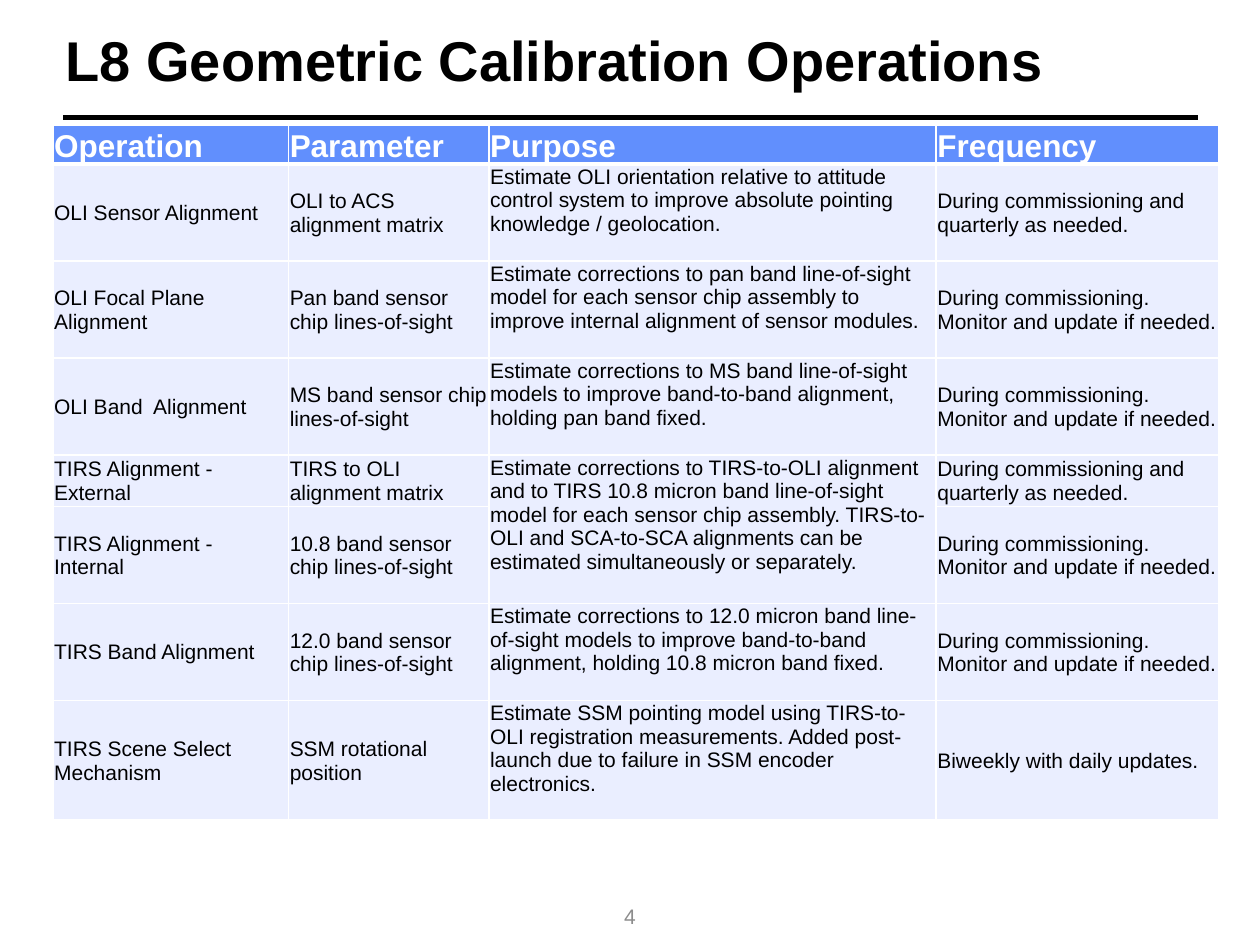
"""Build the L8 geometric calibration operations slide."""
from typing import NamedTuple

from lxml.etree import SubElement
from pptx import Presentation
from pptx.dml.color import RGBColor
from pptx.enum.shapes import MSO_CONNECTOR
from pptx.enum.text import MSO_ANCHOR as Anchor, MSO_AUTO_SIZE as AutoSize, PP_ALIGN as Align
from pptx.oxml.ns import qn
from pptx.util import Inches, Pt

COLORS = {
    "black": "000000",
    "white": "FFFFFF",
    "header": "618FFD",
    "body": "EAEEFF",
    "number": "8C8C8C",
}


class Operation(NamedTuple):
    name: str
    parameter: str
    purpose: str
    frequency: str
    height: float = 0.77


QUARTERLY = "During commissioning and quarterly as needed."
MONITORED = "During commissioning. Monitor and update if needed."
COL_WIDTHS = (1.87, 1.59, 3.55, 2.24)
PURPOSE_COL = 2
SHARED_PURPOSE_ROW = 4

ROWS = [
    Operation("Operation", "Parameter", "Purpose", "Frequency", 0.28),
    Operation("OLI Sensor Alignment", "OLI to ACS alignment matrix",
              "Estimate OLI orientation relative to attitude control system to improve "
              "absolute pointing knowledge / geolocation.", QUARTERLY),
    Operation("OLI Focal Plane Alignment", "Pan band sensor chip lines-of-sight",
              "Estimate corrections to pan band line-of-sight model for each sensor chip "
              "assembly to improve internal alignment of sensor modules.", MONITORED),
    Operation("OLI Band  Alignment", "MS band sensor chip lines-of-sight",
              "Estimate corrections to MS band line-of-sight models to improve "
              "band-to-band alignment, holding pan band fixed.", MONITORED),
    Operation("TIRS Alignment - External", "TIRS to OLI alignment matrix",
              "Estimate corrections to TIRS-to-OLI alignment and to TIRS 10.8 micron band "
              "line-of-sight model for each sensor chip assembly. TIRS-to-OLI and SCA-to-SCA "
              "alignments can be estimated simultaneously or separately.", QUARTERLY, 0.38),
    Operation("TIRS Alignment - Internal", "10.8 band sensor chip lines-of-sight",
              "", MONITORED),
    Operation("TIRS Band Alignment", "12.0 band sensor chip lines-of-sight",
              "Estimate corrections to 12.0 micron band line-of-sight models to improve "
              "band-to-band alignment, holding 10.8 micron band fixed.", MONITORED),
    Operation("TIRS Scene Select Mechanism", "SSM rotational position",
              "Estimate SSM pointing model using TIRS-to-OLI registration measurements. "
              "Added post-launch due to failure in SSM encoder electronics.",
              "Biweekly with daily updates.", 0.95),
]


def rgb(name: str) -> RGBColor:
    return RGBColor.from_string(COLORS[name])


def write(tf, text: str, *, size: float = 12, color: str = "black",
          bold: bool = False, align=Align.LEFT) -> None:
    p = tf.paragraphs[0]
    p.alignment = align
    r = p.add_run()
    r.text = text
    r.font.name = "Arial"
    r.font.size = Pt(size)
    r.font.bold = bold
    r.font.color.rgb = rgb(color)


def set_border(cell, side: str, width: float) -> None:
    props = cell._tc.get_or_add_tcPr()
    line = SubElement(props, qn(f"a:ln{side}"), w=str(Pt(width)))
    fill = SubElement(line, qn("a:solidFill"))
    SubElement(fill, qn("a:srgbClr"), val=COLORS["white"])


def style_cell(cell, row: int, col: int) -> None:
    cell.margin_left = cell.margin_right = cell.margin_top = Inches(0.01)
    cell.margin_bottom = 0
    if row == 0:
        cell.vertical_anchor = Anchor.BOTTOM
    else:
        cell.vertical_anchor = Anchor.TOP if col == PURPOSE_COL else Anchor.MIDDLE
    widths = {"L": 1, "R": 1, "T": 3 if row == 1 else 1, "B": 3 if row == 0 else 1}
    for side, width in widths.items():
        set_border(cell, side, width)
    cell.fill.solid()
    cell.fill.fore_color.rgb = rgb("body" if row else "header")


def add_operations_table(s) -> None:
    frame = s.shapes.add_table(
        len(ROWS), len(COL_WIDTHS), Inches(0.42), Inches(0.99),
        Inches(sum(COL_WIDTHS)), Inches(sum(op.height for op in ROWS)))
    table = frame.table
    for column, width in zip(table.columns, COL_WIDTHS):
        column.width = Inches(width)
    for i, op in enumerate(ROWS):
        table.rows[i].height = Inches(op.height)
        font = {} if i else {"size": 18, "color": "white", "bold": True}
        for j, text in enumerate(op[:len(COL_WIDTHS)]):
            cell = table.cell(i, j)
            style_cell(cell, i, j)
            if text:
                write(cell.text_frame, text, **font)
    table.cell(SHARED_PURPOSE_ROW, PURPOSE_COL).merge(
        table.cell(SHARED_PURPOSE_ROW + 1, PURPOSE_COL))


def add_title(s, text: str) -> None:
    title = s.shapes.title
    title.left, title.top = Inches(0.42), Inches(0.17)
    title.width, title.height = Inches(9.08), Inches(0.6)
    tf = title.text_frame
    tf.auto_size = AutoSize.NONE
    tf.vertical_anchor = Anchor.MIDDLE
    write(tf, text, size=32, bold=True)


def add_title_rule(s) -> None:
    rule = s.shapes.add_connector(MSO_CONNECTOR.STRAIGHT, Inches(0.5), Inches(0.93),
                                  Inches(9.51), Inches(0.93))
    rule.line.color.rgb = rgb("black")
    rule.line.width = Pt(3)
    SubElement(rule._element.spPr, qn("a:effectLst"))


def add_page_number(s, number: int) -> None:
    sp = s.shapes.add_textbox(Inches(4.75), Inches(7.07), Inches(0.5), Inches(0.4))
    tf = sp.text_frame
    tf.word_wrap = True
    tf.vertical_anchor = Anchor.MIDDLE
    write(tf, str(number), color="number", align=Align.CENTER)


def main() -> None:
    prs = Presentation()
    prs.slide_width, prs.slide_height = Inches(10), Inches(7.5)
    s = prs.slides.add_slide(prs.slide_layouts.get_by_name("Title Only"))
    add_title_rule(s)
    add_title(s, "L8 Geometric Calibration Operations")
    add_page_number(s, 4)
    add_operations_table(s)
    prs.save("out.pptx")


if __name__ == "__main__":
    main()
